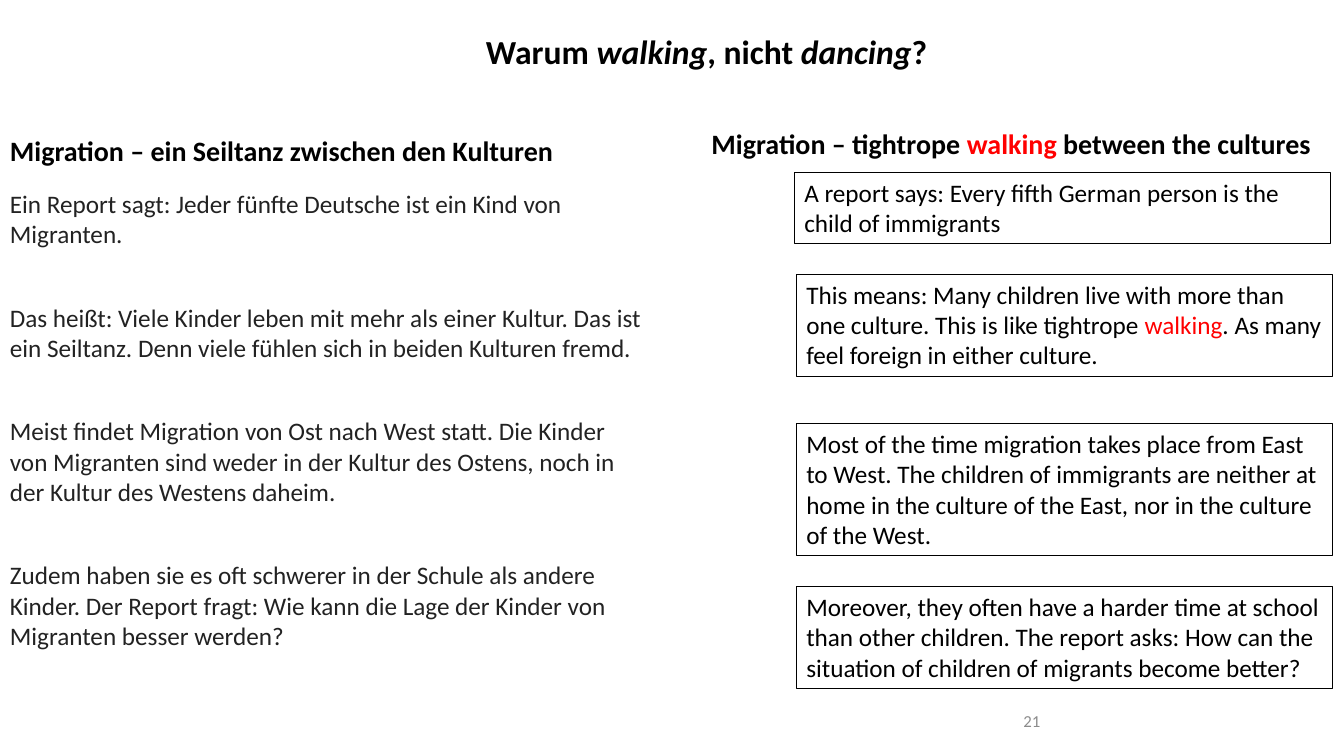
from pptx import Presentation
from pptx import util as u
from pptx.dml.color import RGBColor
from pptx.enum import shapes, text

FONT = "Calibri"
BLACK, RED, DARK, GREY = "000000", "FF0000", "222222", "8C8C8C"
ITALIC = {"italic": True}
MARKED = {"color": RED}

# Each paragraph is a list of (wording, format values that differ)
TITLE = [("Warum ", {}), ("walking", ITALIC), (", nicht ", {}),
         ("dancing", ITALIC), ("?", {})]
GERMAN_HEADING = [("Migration – ein Seiltanz zwischen den Kulturen", {})]
ENGLISH_HEADING = [("Migration – tightrope ", {}), ("walking", MARKED),
                   (" between the cultures", {})]
GERMAN = [
    [("Ein Report sagt: Jeder fünfte Deutsche ist ein Kind von Migranten.", {})],
    [("Das heißt: Viele Kinder leben mit mehr als einer Kultur. Das ist ein "
      "Seiltanz. Denn viele fühlen sich in beiden Kulturen fremd.", {})],
    [("Meist findet Migration von Ost nach West statt. Die Kinder von Migranten "
      "sind weder in der Kultur des Ostens, noch in der Kultur des Westens "
      "daheim.", {})],
    [("Zudem haben sie es oft schwerer in der Schule als andere Kinder. Der "
      "Report fragt: Wie kann die Lage der Kinder von Migranten besser "
      "werden?", {})],
]
# left, top, number of lines, wording
ENGLISH = [
    (20.02, 4.34, 2, [("A report says: Every fifth German person is the child of "
                       "immigrants", {})]),
    (20.07, 6.91, 3, [("This means: Many children live with more than one culture. "
                       "This is like tightrope ", {}), ("walking", MARKED),
                      (". As many feel foreign in either culture.", {})]),
    (20.07, 10.67, 4, [("Most of the time migration takes place from East to West. "
                        "The children of immigrants are neither at home in the "
                        "culture of the East, nor in the culture of the West.", {})]),
    (20.07, 14.78, 3, [("Moreover, they often have a harder time at school than "
                        "other children. The report asks: How can the situation of "
                        "children of migrants become better?", {})]),
]
CARD_WIDTH, LINE_HEIGHT, CARD_PADDING = 13.51, 0.77, 0.26
PARAGRAPH_GAP = 38


def rgb(value):
    return RGBColor.from_string(value)


def lengths(*values):
    return [u.Cm(value) for value in values]


def place(shape, left, top, width, height):
    shape.left, shape.top, shape.width, shape.height = lengths(left, top, width, height)


def write(shape, paragraphs, size, color=BLACK, bold=False, gap=0, wrap=True,
          align=text.PP_ALIGN.LEFT, anchor=text.MSO_ANCHOR.TOP):
    frame = shape.text_frame
    frame.word_wrap = wrap
    frame.auto_size = text.MSO_AUTO_SIZE.NONE
    frame.vertical_anchor = anchor
    for number, spans in enumerate(paragraphs):
        para = frame.add_paragraph() if number else frame.paragraphs[0]
        para.alignment = align
        para.space_before = u.Pt(gap if number else 0)
        for wording, changes in spans:
            span = para.add_run()
            span.text = wording
            values = {"name": FONT, "size": u.Pt(size), "bold": bold,
                      "italic": False, "color": color, **changes}
            span.font.color.rgb = rgb(values.pop("color"))
            for name, value in values.items():
                setattr(span.font, name, value)


def add_text(slide, area, paragraphs, size, **options):
    write(slide.shapes.add_textbox(*lengths(*area)), paragraphs, size, **options)


def add_card(slide, left, top, lines, spans):
    height = CARD_PADDING + LINE_HEIGHT * lines
    card = slide.shapes.add_shape(shapes.MSO_SHAPE.RECTANGLE,
                                  *lengths(left, top, CARD_WIDTH, height))
    card.shadow.inherit = False
    card.fill.background()
    card.line.color.rgb = rgb(BLACK)
    card.line.width = u.Pt(0.75)
    write(card, [spans], 18)


def main():
    deck = Presentation()
    deck.slide_width, deck.slide_height = lengths(33.87, 19.05)
    slide = deck.slides.add_slide(deck.slide_layouts.get_by_name("Title Only"))

    title = slide.shapes.title
    place(title, 11.99, 0.64, 13.79, 1.27)
    write(title, [TITLE], 24, bold=True)

    add_text(slide, (0, 3.23, 14.33, 1.12), [GERMAN_HEADING], 20, bold=True, wrap=False)
    add_text(slide, (0, 4.62, 16.46, 12.75), GERMAN, 18, color=DARK, gap=PARAGRAPH_GAP)
    add_text(slide, (17.68, 3.07, 16.2, 1.12), [ENGLISH_HEADING], 20, bold=True)
    for card in ENGLISH:
        add_card(slide, *card)
    add_text(slide, (18.85, 17.65, 7.62, 1.02), [[("21", {})]], 12, color=GREY,
             align=text.PP_ALIGN.RIGHT, anchor=text.MSO_ANCHOR.MIDDLE)
    deck.save("out.pptx")


if __name__ == "__main__":
    main()
